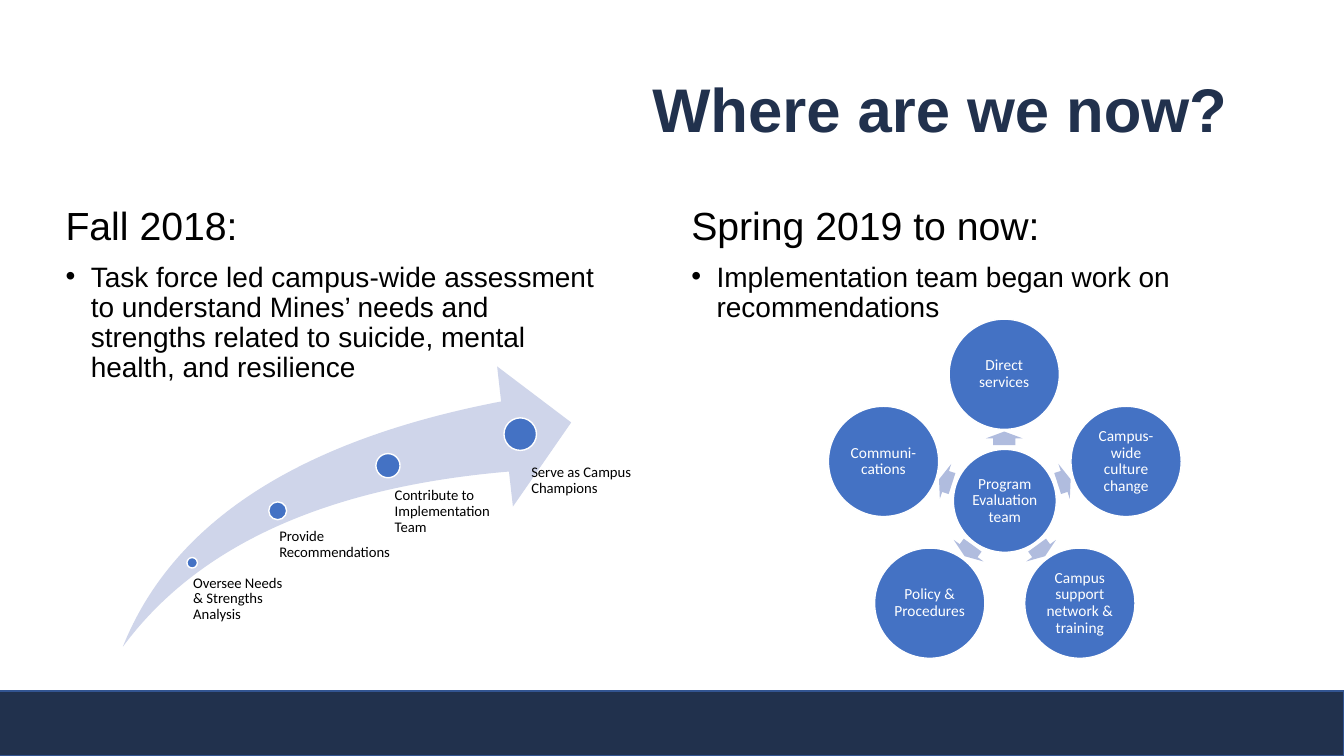
from math import cos, radians, sin

from lxml.etree import SubElement
from pptx import Presentation
from pptx.dml.color import RGBColor
from pptx.enum.shapes import MSO_SHAPE as Shape
from pptx.enum.text import MSO_ANCHOR as Anchor, PP_ALIGN as Align
from pptx.oxml.ns import qn
from pptx.util import Pt

PX = 9525
COLORS = {
    "navy": "21314D", "edge": "325491", "blue": "4472C4", "pale": "CFD5EA",
    "mist": "B0BCDE", "white": "FFFFFF", "black": "000000",
}
STEPS = [
    (183, 536, 10, "Oversee Needs & Strengths Analysis", (179, 548, 98, 70)),
    (265, 486, 17, "Provide Recommendations", (258, 504, 118, 87)),
    (369, 444, 23, "Contribute to Implementation Team", (365, 465, 108, 152)),
    (495, 413, 31, "Serve as Campus Champions", (491, 443, 111, 136)),
]
TEAMS = [
    "Direct services", "Campus-wide culture change",
    "Campus support network & training", "Policy & Procedures",
    "Communi-cations",
]


def color(name):
    return RGBColor.from_string(COLORS[name])


def scale(box):
    return [n * PX for n in box]


def inset(frame, left, top, right, bottom):
    frame.margin_left, frame.margin_top = left * PX, top * PX
    frame.margin_right, frame.margin_bottom = right * PX, bottom * PX


def style(para, size, face, tint, bold=False, align=Align.LEFT):
    para.alignment = align
    para.line_spacing = 0.9
    font = para.font
    font.size, font.name, font.bold = Pt(size), face, bold
    font.color.rgb = color(tint)


def draw(slide, kind, box, fill, line=None):
    shape = slide.shapes.add_shape(kind, *scale(box))
    shape.shadow.inherit = False
    shape.fill.solid()
    shape.fill.fore_color.rgb = color(fill)
    if line:
        shape.line.color.rgb = color(line)
        shape.line.width = Pt(1)
    else:
        shape.line.fill.background()
    return shape


def write(slide, box):
    frame = slide.shapes.add_textbox(*scale(box)).text_frame
    frame.word_wrap = True
    return frame


def disc(slide, x, y, size):
    box = (x - size / 2, y - size / 2, size, size)
    return draw(slide, Shape.OVAL, [round(n) for n in box], "blue", "white")


def footer(slide, box):
    draw(slide, Shape.RECTANGLE, box, "navy", "edge")


def title(slide, box, text):
    frame = write(slide, box)
    frame.vertical_anchor = Anchor.MIDDLE
    para = frame.paragraphs[0]
    para.text = text
    style(para, 44, "Arial", "navy", True, Align.RIGHT)


def column(slide, box, head, text):
    frame = write(slide, box)
    para = frame.paragraphs[0]
    para.text = head
    style(para, 28, "Arial", "black")
    item = frame.add_paragraph()
    item.text = text
    props = item._p.get_or_add_pPr()
    props.set("marL", str(24 * PX))
    props.set("indent", str(-24 * PX))
    SubElement(props, qn("a:buFont")).set("typeface", "Arial")
    SubElement(props, qn("a:buChar")).set("char", "•")
    item.space_before = Pt(10)
    style(item, 20, "Arial", "black")


def swoosh(slide, box):
    arrow = draw(slide, Shape.SWOOSH_ARROW, box, "pale")
    arrow.adjustments[0] = arrow.adjustments[1] = 0.25
    left, top = box[:2]
    for x, y, size, text, area in STEPS:
        disc(slide, left + x - 117, top + y - 349, size)
        ax, ay, w, h = area
        frame = write(slide, (left + ax - 117, top + ay - 349, w, h))
        inset(frame, size // 2, 0, 0, 0)
        para = frame.paragraphs[0]
        para.text = text
        style(para, 10.5, "Calibri", "black")


def label(shape, text):
    frame = shape.text_frame
    frame.word_wrap = True
    frame.vertical_anchor = Anchor.MIDDLE
    inset(frame, 2, 2, 2, 2)
    para = frame.paragraphs[0]
    para.text = text
    style(para, 11, "Calibri", "white", align=Align.CENTER)


def wheel(slide, box):
    left, top, w, h = box
    x, y = left + w // 2, top + 173
    label(disc(slide, x, y, 98), "Program Evaluation team")
    for i, text in enumerate(TEAMS):
        turn = i * 360 / len(TEAMS) - 90
        dx, dy = cos(radians(turn)), sin(radians(turn))
        spot = (round(x + 59 * dx - 6.5), round(y + 59 * dy - 17.5), 13, 35)
        arrow = draw(slide, Shape.RIGHT_ARROW, spot, "mist")
        arrow.adjustments[0], arrow.adjustments[1] = 0.6, 0.5
        arrow.rotation = turn % 360
        label(disc(slide, x + 121 * dx, y + 121 * dy, 105), text)


def main():
    deck = Presentation()
    deck.slide_width, deck.slide_height = 1280 * PX, 720 * PX
    slide = deck.slides.add_slide(deck.slide_layouts[6])
    footer(slide, (-1, 658, 1281, 62))
    title(slide, (53, 38, 1126, 139), "Where are we now?")
    column(slide, (53, 192, 539, 457), "Fall 2018:",
           "Task force led campus-wide assessment to understand Mines’ needs "
           "and strengths related to suicide, mental health, and resilience")
    swoosh(slide, (117, 349, 427, 267))
    column(slide, (649, 192, 539, 457), "Spring 2019 to now:",
           "Implementation team began work on recommendations")
    wheel(slide, (789, 304, 336, 323))
    deck.save("out.pptx")


if __name__ == "__main__":
    main()
